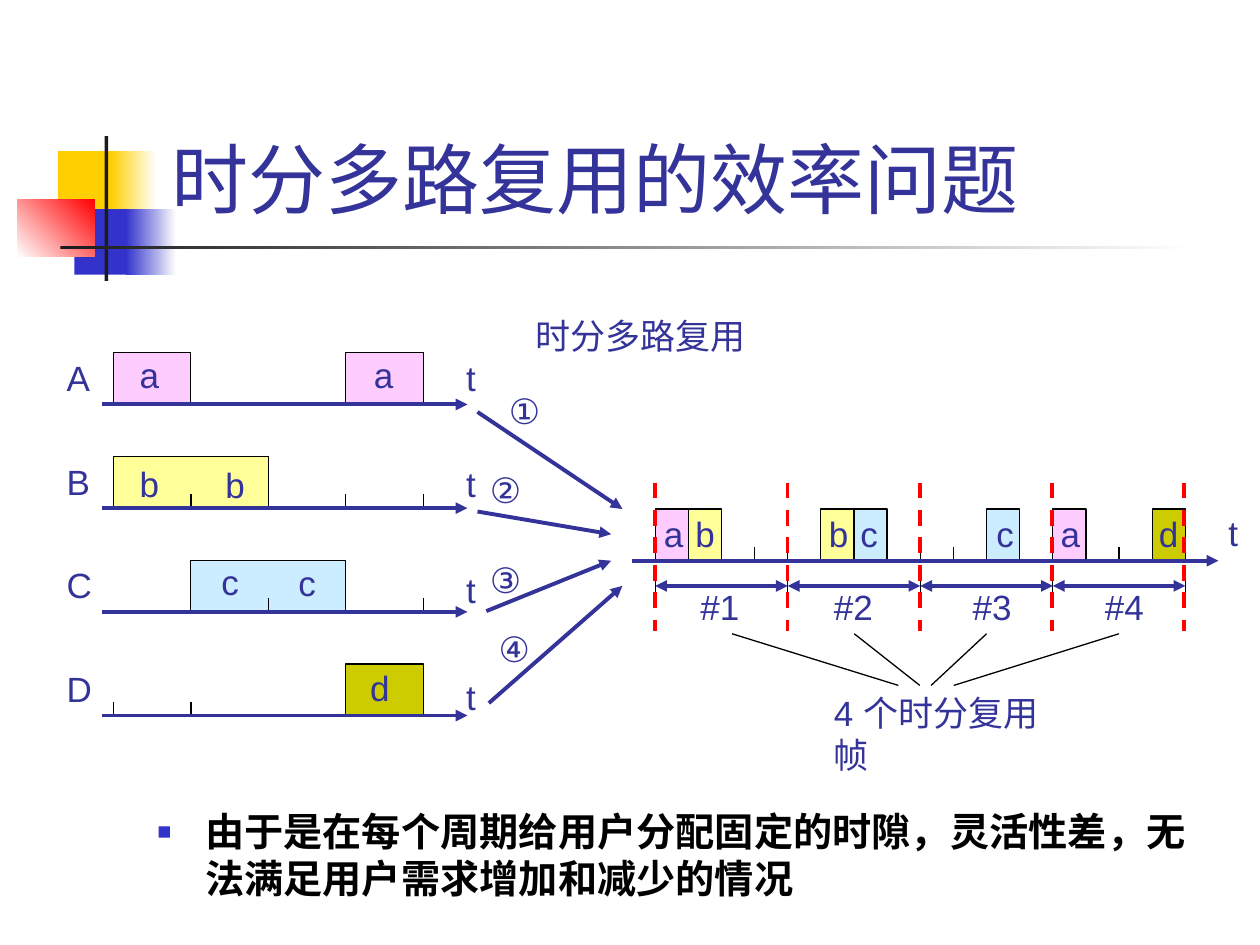
from typing import NamedTuple

from lxml.etree import SubElement
from pptx import Presentation
from pptx.dml.color import RGBColor
from pptx.enum.dml import MSO_LINE
from pptx.enum.shapes import MSO_CONNECTOR, MSO_SHAPE
from pptx.enum.text import MSO_ANCHOR, MSO_AUTO_SIZE
from pptx.oxml.ns import qn
from pptx.util import Inches, Pt

HUES = {
    "ink": "333399", "black": "000000", "white": "FFFFFF", "dash": "FF0000",
    "gold": "FFCF01", "blue": "3333CC", "red": "FF0000", "dark": "1C1C1C",
    "a": "FFCCFF", "b": "FFFF99", "c": "CCECFF", "d": "CCCC00",
}


class Block(NamedTuple):
    left: float
    top: float
    width: float
    height: float
    hue: str
    fade: str = ""
    angle: float = 0


class Slot(NamedTuple):
    name: str
    start: int
    span: int = 1


class Lane(NamedTuple):
    name: str
    slots: list[Slot]
    ticks: list[int]
    marks: list[tuple[float, float]]


class Route(NamedTuple):
    name: str
    start: tuple[float, float]
    end: tuple[float, float]
    label: tuple[float, float]


BLOCKS = [
    Block(0.46, 1.2, 0.48, 0.52, "gold"),
    Block(0.88, 1.2, 0.36, 0.52, "gold", "white"),
    Block(0.59, 1.66, 0.46, 0.52, "blue"),
    Block(1, 1.66, 0.4, 0.52, "blue", "white"),
    Block(0.14, 1.58, 0.61, 0.46, "white", "red", 45),
    Block(0.83, 1.08, 0.03, 1.15, "dark"),
    Block(0.48, 1.95, 9, 0.03, "dark", "white"),
]
LANES = [
    Lane("A", [Slot("a", 0), Slot("a", 3)], [], [(1.01, 2.76), (2.87, 2.76)]),
    Lane("B", [Slot("b", 0, 2)], [1, 3, 4], [(1.01, 3.62), (1.69, 3.63)]),
    Lane("C", [Slot("c", 1, 2)], [2, 4], [(1.66, 4.4), (2.27, 4.41)]),
    Lane("D", [Slot("d", 3)], [0, 1, 3], [(2.84, 5.24)]),
]
MIXED = [
    (Slot("a", 0), 5.17), (Slot("b", 1), 5.42), (Slot("b", 5), 6.48),
    (Slot("c", 6), 6.73), (Slot("c", 10), 7.81), (Slot("a", 12), 8.32),
    (Slot("d", 15), 9.1),
]
ROUTES = [
    Route("①", (3.79, 3.27), (4.94, 4.04), (3.94, 3.04)),
    Route("②", (3.79, 4.06), (4.85, 4.24), (3.79, 3.67)),
    Route("③", (3.86, 4.85), (4.85, 4.45), (3.79, 4.38)),
    Route("④", (3.88, 5.58), (4.94, 4.65), (3.86, 4.93)),
]
FRAMES = [
    ("#1", 5.46, 5.81, 7.13), ("#2", 6.52, 6.78, 7.3),
    ("#3", 7.62, 7.83, 7.39), ("#4", 8.67, 8.88, 7.57),
]
LEFT, STEP = 0.9, 0.615
BASE, PITCH = 3.21, 0.823
MIX, CELL, LEVEL = 5.2, 0.263, 4.45
RISE, TICK = 0.41, 0.11

deck = Presentation()
deck.slide_width, deck.slide_height = Inches(10), Inches(7.5)
slide = deck.slides.add_slide(deck.slide_layouts[6])
shapes = slide.shapes


def tint(hue: str) -> RGBColor:
    return RGBColor.from_string(HUES[hue])


def block(item: Block) -> None:
    shape = shapes.add_shape(MSO_SHAPE.RECTANGLE, Inches(item.left), Inches(item.top),
                             Inches(item.width), Inches(item.height))
    shape.shadow.inherit = False
    shape.line.fill.background()
    if item.fade:
        shape.fill.gradient()
        shape.fill.gradient_angle = item.angle
        for stop, hue, place in zip(shape.fill.gradient_stops, (item.hue, item.fade), (0, 1)):
            stop.color.rgb = tint(hue)
            stop.position = place
    else:
        shape.fill.solid()
        shape.fill.fore_color.rgb = tint(item.hue)


def write(text: str, left: float, top: float, width: float, height: float = 0.43,
          size: float = 20, font: str = "Arial", hue: str = "ink", wrap: bool = False):
    frame = shapes.add_textbox(Inches(left), Inches(top), Inches(width), Inches(height)).text_frame
    frame.text = text
    frame.word_wrap = wrap
    frame.auto_size = MSO_AUTO_SIZE.NONE if wrap else MSO_AUTO_SIZE.SHAPE_TO_FIT_TEXT
    style = frame.paragraphs[0].runs[0].font
    style.size, style.name = Pt(size), font
    style.color.rgb = tint(hue)
    return frame


def letter(name: str, left: float, top: float) -> None:
    write(name, left, top, 0.34 if name == "c" else 0.36)


def line(start: tuple[float, float], end: tuple[float, float], hue: str = "black",
         width: float = 0.75, heads: tuple[str, ...] = ()):
    link = shapes.add_connector(MSO_CONNECTOR.STRAIGHT, Inches(start[0]), Inches(start[1]),
                                Inches(end[0]), Inches(end[1]))
    link.line.color.rgb = tint(hue)
    link.line.width = Pt(width)
    for head in heads:
        SubElement(link.line._get_or_add_ln(), qn(f"a:{head}"), type="triangle")
    SubElement(link._element.spPr, qn("a:effectLst"))
    return link


def arrow(start: tuple[float, float], end: tuple[float, float], both: bool = False) -> None:
    line(start, end, "ink", 2.25, ("headEnd", "tailEnd") if both else ("tailEnd",))


def pulse(slot: Slot, left: float, step: float, base: float) -> None:
    west = Inches(left + slot.start * step)
    east = Inches(left + (slot.start + slot.span) * step)
    top, foot = Inches(base - RISE), Inches(base)
    path = shapes.build_freeform(west, foot)
    path.add_line_segments([(west, top), (east, top), (east, foot)], close=False)
    shape = path.convert_to_shape()
    shape.shadow.inherit = False
    shape.fill.solid()
    shape.fill.fore_color.rgb = tint(slot.name)
    shape.line.color.rgb = tint("black")
    shape.line.width = Pt(0.75)


def ticks(marks: list[int], left: float, step: float, base: float) -> None:
    for mark in marks:
        spot = left + mark * step
        line((spot, base - TICK), (spot, base))


def lane(item: Lane, row: int) -> None:
    base = BASE + row * PITCH
    for slot in item.slots:
        pulse(slot, LEFT, STEP, base)
    ticks(item.ticks, LEFT, STEP, base)
    arrow((0.81, base), (3.71, base))
    write(item.name, 0.43, base - 0.43, 0.4)
    write("t", 3.6, 2.78 + row * 0.843, 0.28)
    for left, top in item.marks:
        letter(item.slots[0].name, left, top)


for item in BLOCKS:
    block(item)

title = write("时分多路复用的效率问题", 1.26, 0.23, 8.52, 1.6, 44, "Karla", wrap=True)
title.vertical_anchor = MSO_ANCHOR.BOTTOM

body = write("由于是在每个周期给用户分配固定的时隙，灵活性差，无法满足用户需求增加和减少的情况",
             1.15, 6.36, 8.5, 0.91, 22.4, "Karla", "black", True)
point = body.paragraphs[0]
point.runs[0].font.bold = True
point.space_before = Pt(4.5)
props = point._p.get_or_add_pPr()
props.set("marL", str(Inches(0.38)))
props.set("indent", str(Inches(-0.38)))
SubElement(SubElement(props, qn("a:buClr")), qn("a:srgbClr"), val=HUES["blue"])
SubElement(props, qn("a:buSzPct"), val="60000")
SubElement(props, qn("a:buFont"), typeface="Arial")
SubElement(props, qn("a:buChar"), char="■")

for row, item in enumerate(LANES):
    lane(item, row)

for item in ROUTES:
    arrow(item.start, item.end)
    write(item.name, *item.label, 0.48)

for slot, left in MIXED:
    pulse(slot, MIX, CELL, LEVEL)
ticks([2, 3, 4, 8, 9, 14], MIX, CELL, LEVEL)
arrow((5.02, LEVEL), (9.67, LEVEL))
for slot, left in MIXED:
    letter(slot.name, left, 4.02)
write("t", 9.65, 4.01, 0.28)
write("时分多路复用", 4.15, 2.45, 1.88)
write("4 个时分复用帧", 6.52, 5.44, 2, 0.76, wrap=True)

edges = [MIX + 4 * CELL * turn for turn in range(5)]
for edge in edges:
    line((edge, 4.55), (edge, 4.76))
for west, east, (name, left, start, end) in zip(edges, edges[1:], FRAMES):
    arrow((west, 4.65), (east, 4.65), True)
    write(name, left, 4.6, 0.51)
    line((start, 5.03), (end, 5.44))
for turn in range(5):
    edge = MIX + 1.05 * turn
    line((edge, 3.83), (edge, 5.01), "dash", 2.25).line.dash_style = MSO_LINE.DASH

deck.save("out.pptx")
